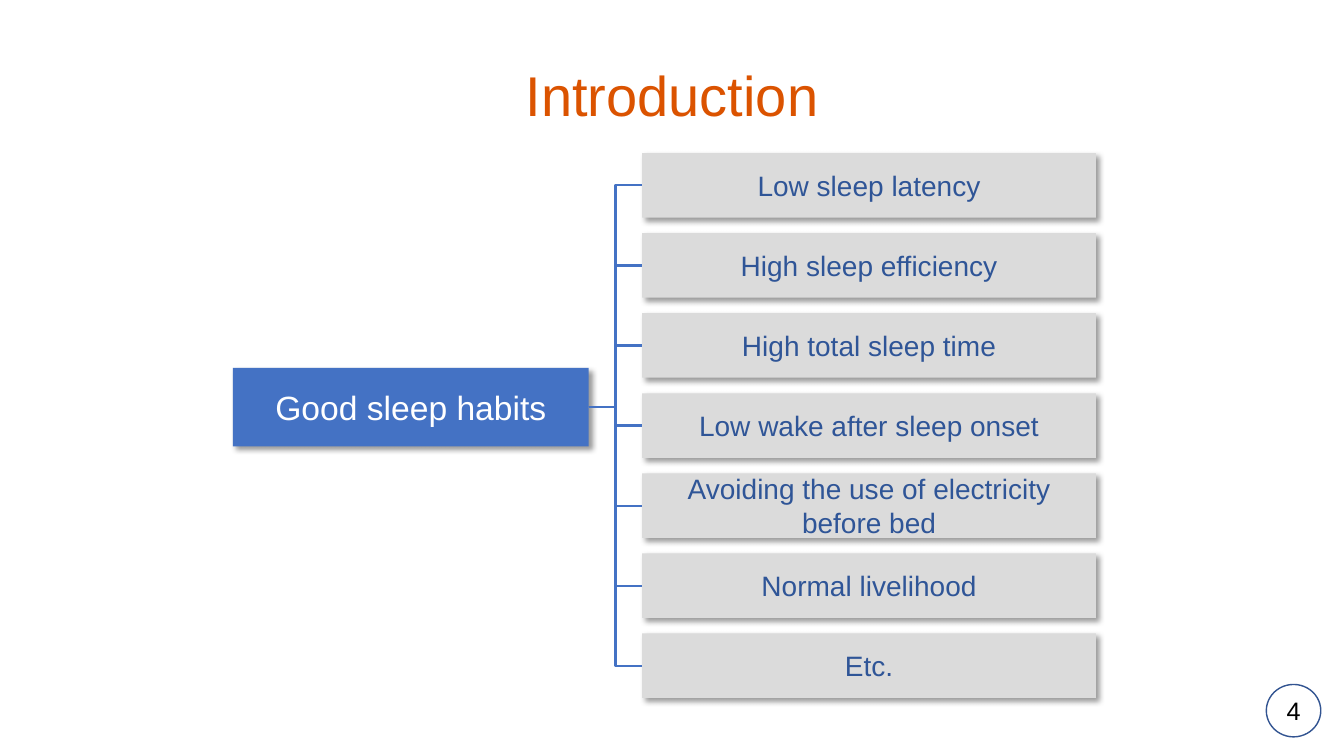
"""Build the slide on good sleep habits as a tree of boxes."""
from lxml import etree
from pptx import Presentation
from pptx.dml.color import RGBColor
from pptx.enum import shapes, text
from pptx.oxml import parse_xml
from pptx.oxml.ns import nsdecls, qn
from pptx.util import Inches, Pt

ORANGE = RGBColor(0xDB, 0x53, 0x00)
BLUE = RGBColor(0x44, 0x72, 0xC4)
NAVY = RGBColor(0x2F, 0x55, 0x97)
RING = RGBColor(0x32, 0x54, 0x91)
GRAY = RGBColor(0xDB, 0xDB, 0xDB)
WHITE = RGBColor(0xFF, 0xFF, 0xFF)
BLACK = RGBColor(0x00, 0x00, 0x00)

SHADE = (
    f'<a:effectLst {nsdecls("a")}><a:outerShdw blurRad="50800" dist="38100" '
    'dir="2700000" algn="tl" rotWithShape="0"><a:srgbClr val="000000">'
    '<a:alpha val="40000"/></a:srgbClr></a:outerShdw></a:effectLst>'
)
HABITS = [
    "Low sleep latency",
    "High sleep efficiency",
    "High total sleep time",
    "Low wake after sleep onset",
    "Avoiding the use of electricity before bed",
    "Normal livelihood",
    "Etc.",
]


def write(shape, words, size, color, wrap=True, anchor=text.MSO_ANCHOR.MIDDLE, inset=0.1):
    frame = shape.text_frame
    frame.text = words
    frame.word_wrap = wrap
    frame.vertical_anchor = anchor
    frame.margin_left = frame.margin_right = Inches(inset)
    frame.margin_top = frame.margin_bottom = Inches(0.05)
    para = frame.paragraphs[0]
    para.alignment = text.PP_ALIGN.CENTER
    para.font.name = "Arial"
    para.font.size = Pt(size)
    para.font.color.rgb = color
    return para


def add_box(left, top, width, height, fill, words, size, color):
    box = slide.shapes.add_shape(
        shapes.MSO_SHAPE.RECTANGLE, Inches(left), Inches(top), Inches(width), Inches(height))
    box.fill.solid()
    box.fill.fore_color.rgb = fill
    box.line.fill.background()
    box._element.spPr.append(parse_xml(SHADE))
    write(box, words, size, color, inset=0.15)
    return box


deck = Presentation()
deck.slide_width, deck.slide_height = Inches(13.33), Inches(7.5)
slide = deck.slides.add_slide(deck.slide_layouts[5])

title = slide.shapes.title
title.left, title.top = Inches(4.93), Inches(0.27)
title.width, title.height = Inches(3.47), Inches(0.94)
head = write(title, "Introduction", 40, ORANGE, wrap=False, anchor=text.MSO_ANCHOR.TOP)
head.line_spacing = Pt(68.3)

badge = slide.shapes.add_shape(
    shapes.MSO_SHAPE.OVAL, Inches(12.56), Inches(6.79), Inches(0.54), Inches(0.52))
badge.shadow.inherit = False
badge.fill.solid()
badge.fill.fore_color.rgb = WHITE
badge.line.color.rgb = RING
badge.line.width = Pt(1)
write(badge, "4", 18, BLACK, inset=0)

root = add_box(2.31, 3.65, 3.53, 0.78, BLUE, "Good sleep habits", 24, WHITE)
for row, habit in enumerate(HABITS):
    leaf = add_box(6.37, 1.52 + row * 0.794, 4.5, 0.64, GRAY, habit, 20, NAVY)
    link = slide.shapes.add_connector(shapes.MSO_CONNECTOR.ELBOW, 0, 0, 0, 0)
    link.begin_connect(root, 3)
    link.end_connect(leaf, 1)
    link.line.color.rgb = BLUE
    link.line.width = Pt(1.5)
    etree.SubElement(link._element.spPr, qn("a:effectLst"))

deck.save("out.pptx")
